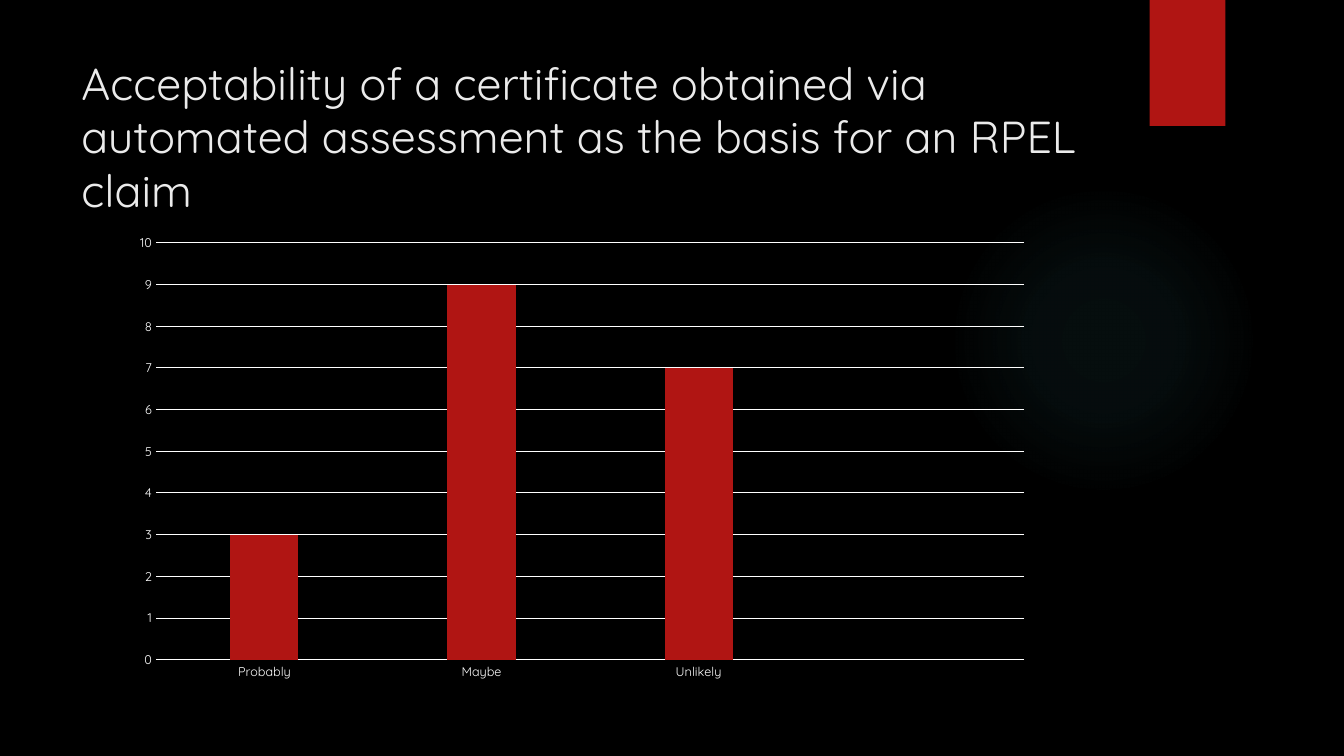
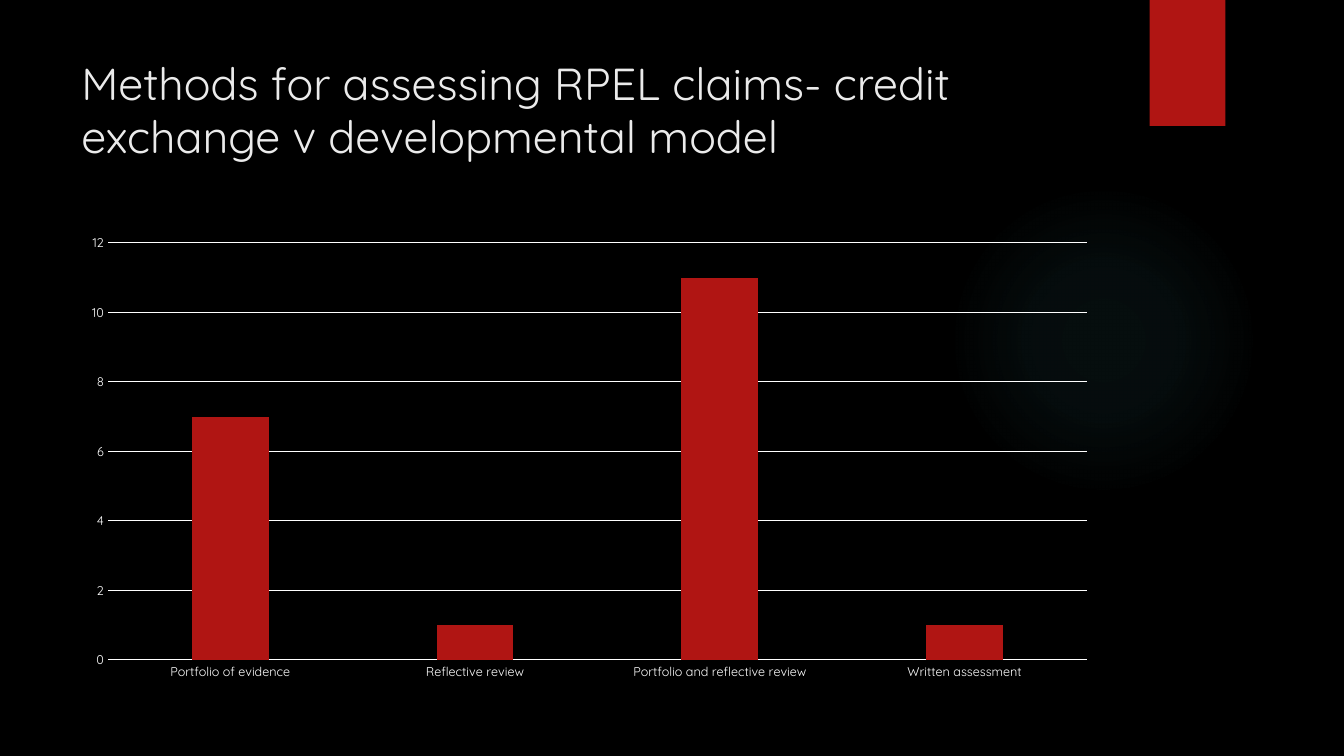
from lxml import etree
from pptx import Presentation
from pptx.chart.data import CategoryChartData
from pptx.dml.color import RGBColor
from pptx.enum.chart import XL_CHART_TYPE as ChartType, XL_TICK_MARK as TickMark
from pptx.enum.shapes import MSO_SHAPE as Shape
from pptx.enum.text import MSO_ANCHOR as Anchor
from pptx.oxml import parse_xml
from pptx.oxml.ns import nsdecls
from pptx.util import Pt

PX = 9525
FONT = "Quicksand"
BLACK = RGBColor(0x00, 0x00, 0x00)
WHITE = RGBColor(0xFF, 0xFF, 0xFF)
RED = RGBColor(0xB0, 0x15, 0x13)
PALE = RGBColor(0xEB, 0xEB, 0xEB)
TEAL = RGBColor(0x50, 0xB9, 0xC1)

GLOW_BOX = (903, 176, 296, 296)
BAND_BOX = (1095, 0, 72, 120)
TITLE_BOX = (68, 48, 988, 147)
GLOW_STOPS = [(0, 7), (36, 6), (69, 0)]

SLIDES = [
    {
        "title": "Acceptability of a certificate obtained via automated assessment "
                 "as the basis for an RPEL claim",
        "box": (116, 215, 877, 441),
        "bars": [("Probably", 3), ("Maybe", 9), ("Unlikely", 7), ("", None)],
        "top": 10,
        "step": 1,
    },
    {
        "title": "Methods for assessing RPEL claims- credit exchange v developmental model",
        "box": (68, 215, 987, 441),
        "bars": [("Portfolio of evidence", 7), ("Reflective review", 1),
                 ("Portfolio and reflective review", 11), ("Written assessment", 1)],
        "top": 12,
        "step": 2,
    },
]


def emu(box):
    return [length * PX for length in box]


def add_plain_shape(page, kind, box, color):
    shape = page.shapes.add_shape(kind, *emu(box))
    shape.shadow.inherit = False
    shape.fill.solid()
    shape.fill.fore_color.rgb = color
    shape.line.fill.background()
    return shape


def add_glow(page, box):
    glow = add_plain_shape(page, Shape.OVAL, box, TEAL)
    stops = "".join(
        f'<a:gs pos="{position * 1000}"><a:srgbClr val="{TEAL}">'
        f'<a:alpha val="{alpha * 1000}"/></a:srgbClr></a:gs>'
        for position, alpha in GLOW_STOPS)
    gradient = parse_xml(
        f'<a:gradFill {nsdecls("a")}><a:gsLst>{stops}</a:gsLst><a:path path="circle">'
        '<a:fillToRect l="50000" t="50000" r="50000" b="50000"/></a:path></a:gradFill>')
    properties = glow.fill._xPr
    properties.replace(properties.solidFill if hasattr(properties, "solidFill")
                       else properties.find("{*}solidFill"), gradient)


def add_title(page, box, text):
    frame = page.shapes.add_textbox(*emu(box)).text_frame
    frame.word_wrap = True
    frame.vertical_anchor = Anchor.TOP
    frame.text = text
    font = frame.paragraphs[0].runs[0].font
    font.name, font.size, font.color.rgb = FONT, Pt(32), PALE


def style_font(font, size):
    font.name, font.size, font.color.rgb = FONT, Pt(size), WHITE


def style_line(line):
    line.color.rgb = WHITE
    line.width = Pt(0.75)


def add_bar_chart(page, box, bars, top, step):
    data = CategoryChartData()
    data.categories = [name for name, value in bars]
    data.add_series("Series 1", [value for name, value in bars])
    chart = page.shapes.add_chart(ChartType.COLUMN_CLUSTERED, *emu(box), data).chart
    chart.has_legend = False
    chart.has_title = False
    style_font(chart.font, 10)

    plot = chart.plots[0]
    plot.gap_width = 219
    plot.overlap = -27
    plot.vary_by_categories = False
    fill = plot.series[0].format.fill
    fill.solid()
    fill.fore_color.rgb = RED

    for axis in (chart.category_axis, chart.value_axis):
        axis.major_tick_mark = TickMark.NONE
        axis.minor_tick_mark = TickMark.NONE
        style_font(axis.tick_labels.font, 9)
    style_line(chart.category_axis.format.line)

    scale = chart.value_axis
    scale.minimum_scale, scale.maximum_scale, scale.major_unit = 0, top, step
    scale.format.line.fill.background()
    scale.has_major_gridlines = True
    style_line(scale.major_gridlines.format.line)


def add_chart_slide(deck, title, box, bars, top, step):
    page = deck.slides.add_slide(deck.slide_layouts[6])
    page.background.fill.solid()
    page.background.fill.fore_color.rgb = BLACK
    add_glow(page, GLOW_BOX)
    add_plain_shape(page, Shape.RECTANGLE, BAND_BOX, RED)
    add_title(page, TITLE_BOX, title)
    add_bar_chart(page, box, bars, top, step)


def main():
    deck = Presentation()
    deck.slide_width, deck.slide_height = 1280 * PX, 720 * PX
    for content in SLIDES:
        add_chart_slide(deck, **content)
    deck.save("out.pptx")


if __name__ == "__main__":
    main()
